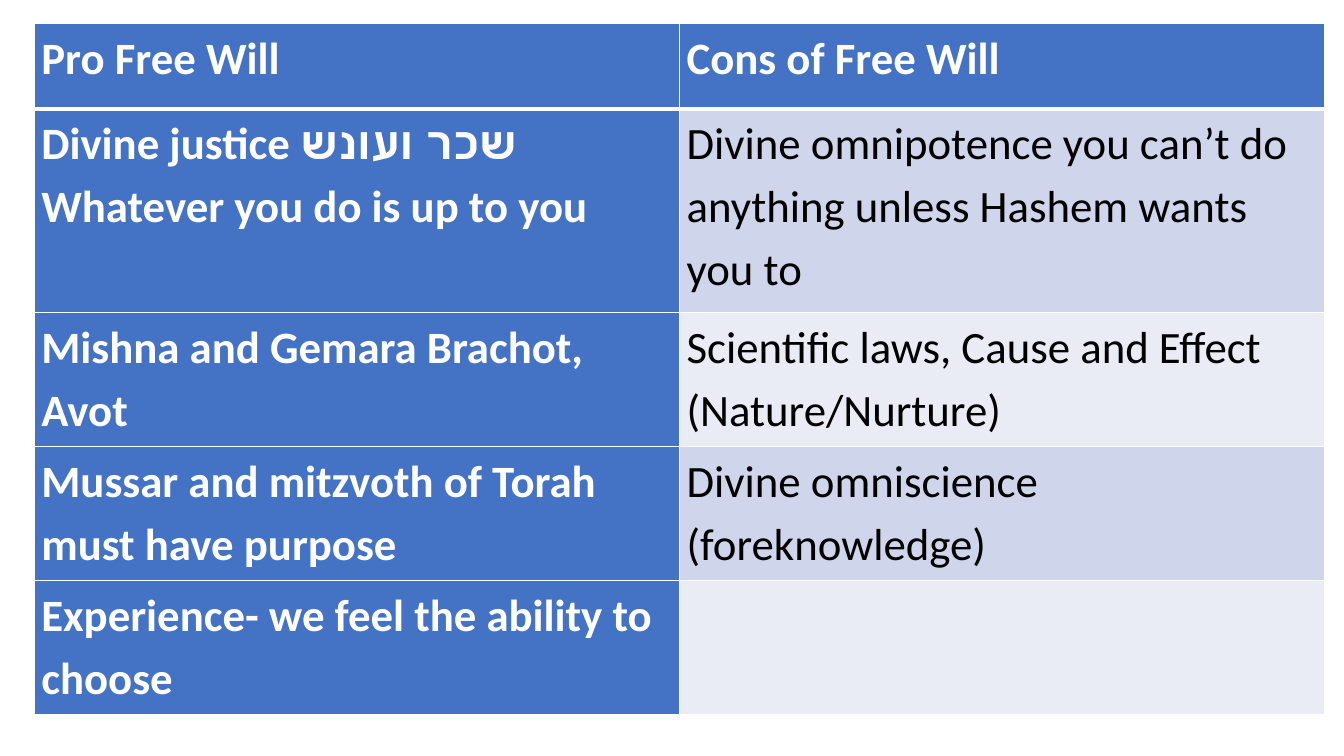
from dataclasses import dataclass

import pptx
import pptx.dml.color
import pptx.oxml
import pptx.oxml.ns
import pptx.table
import pptx.util
from pptx.dml.color import RGBColor
from pptx.util import Inches

WHITE = RGBColor(0xFF, 0xFF, 0xFF)
BLACK = RGBColor(0x00, 0x00, 0x00)
BLUE = RGBColor(0x44, 0x72, 0xC4)
BAND_DARK = RGBColor(0xCF, 0xD5, 0xEA)
BAND_LIGHT = RGBColor(0xE9, 0xEB, 0xF5)


@dataclass
class ArgumentRow:
    height: float
    pro: str
    con: str


ARGUMENTS = [
    ArgumentRow(0.85, "Pro Free Will", "Cons of Free Will"),
    ArgumentRow(2.02, "Divine justice שכר ועונש\nWhatever you do is up to you",
                "Divine omnipotence you can’t do anything unless Hashem wants you to"),
    ArgumentRow(1.33, "Mishna and Gemara Brachot, Avot",
                "Scientific laws, Cause and Effect (Nature/Nurture)"),
    ArgumentRow(1.33, "Mussar and mitzvoth of Torah must have purpose",
                "Divine omniscience (foreknowledge)"),
    ArgumentRow(1.33, "Experience- we feel the ability to choose", ""),
]


def set_border(cell: pptx.table._Cell, side: str, points: float) -> None:
    properties = cell._tc.get_or_add_tcPr()
    properties.append(pptx.oxml.parse_xml(
        f'<a:ln{side} {pptx.oxml.ns.nsdecls("a")} w="{pptx.util.Pt(points)}">'
        f'<a:solidFill><a:srgbClr val="{WHITE}"/></a:solidFill></a:ln{side}>'))


def fill_cell(cell: pptx.table._Cell, text: str, row: int, column: int) -> None:
    """Write and style a cell; the header row and first column are emphasised."""
    emphasised = row == 0 or column == 0
    cell.margin_left = cell.margin_right = Inches(0.07)
    cell.margin_top = cell.margin_bottom = 0
    for side in "LRTB":
        under_header = (row, side) in ((0, "B"), (1, "T"))
        set_border(cell, side, 3 if under_header else 1)
    cell.fill.solid()
    band = BAND_DARK if row % 2 else BAND_LIGHT
    cell.fill.fore_color.rgb = BLUE if emphasised else band

    cell.text_frame.text = text
    for para in cell.text_frame.paragraphs:
        para.line_spacing = 1.15
        para.font.name = "Calibri"
        para.font.size = pptx.util.Pt(32)
        para.font.bold = emphasised
        para.font.color.rgb = WHITE if emphasised else BLACK


def main() -> None:
    deck = pptx.Presentation()
    deck.slide_width, deck.slide_height = Inches(13.33), Inches(7.5)
    page = deck.slides.add_slide(deck.slide_layouts[6])
    total_height = sum(argument.height for argument in ARGUMENTS)
    table = page.shapes.add_table(
        len(ARGUMENTS), 2, Inches(0.34), Inches(0.23),
        Inches(12.8), Inches(total_height)).table
    table.first_col = True
    for row, argument in enumerate(ARGUMENTS):
        table.rows[row].height = Inches(argument.height)
        for column, text in enumerate((argument.pro, argument.con)):
            fill_cell(table.cell(row, column), text, row, column)
    deck.save("out.pptx")


if __name__ == "__main__":
    main()
